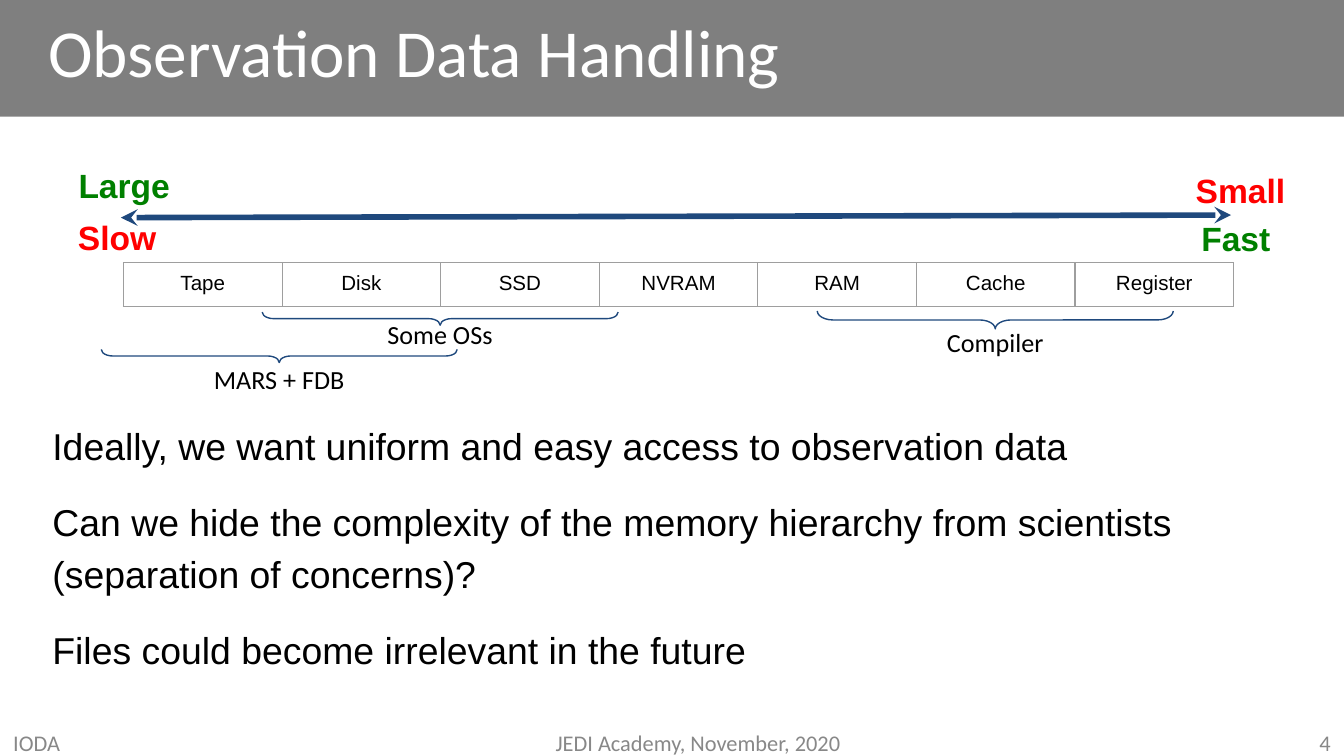
from lxml import etree
from pptx import Presentation
from pptx.dml.color import RGBColor
from pptx.enum.shapes import MSO_CONNECTOR, MSO_SHAPE
from pptx.enum.text import MSO_ANCHOR, PP_ALIGN
from pptx.oxml.ns import qn
from pptx.util import Pt

LEFT, CENTER, RIGHT = PP_ALIGN.LEFT, PP_ALIGN.CENTER, PP_ALIGN.RIGHT
TOP, MIDDLE = MSO_ANCHOR.TOP, MSO_ANCHOR.MIDDLE
RECTANGLE, LEFT_BRACE = MSO_SHAPE.RECTANGLE, MSO_SHAPE.LEFT_BRACE
STRAIGHT = MSO_CONNECTOR.STRAIGHT
BLACK, WHITE, NAVY, GREY = "000000", "FFFFFF", "1F497D", "888888"
GREEN, RED, BORDER = "008000", "FF0000", "9E9E9E"


def rgb(value):
    """Turn a hex string into a colour."""
    return RGBColor.from_string(value)


def write(frame, *lines, size=12, font="Calibri", color=BLACK, bold=False,
          align=LEFT, spacing=None, gap=0):
    """Fill a text frame with one paragraph per line."""
    for index, line in enumerate(lines):
        paragraph = frame.add_paragraph() if index else frame.paragraphs[0]
        paragraph.alignment = align
        if spacing:
            paragraph.line_spacing = spacing
        if index and gap:
            paragraph.space_before = Pt(gap)
        run = paragraph.add_run()
        run.text = line
        run.font.size = Pt(size)
        run.font.name = font
        run.font.bold = bold
        run.font.color.rgb = rgb(color)


class SlideBuilder:
    """Holds the style and the current slide."""

    def __init__(self, slide, accent=NAVY):
        """Remember the slide and its line colour."""
        self.shapes = slide.shapes
        self.accent = accent

    def banner(self, width, height):
        """Draw the half-transparent band behind the title."""
        band = self.shapes.add_shape(RECTANGLE, 0, 0, Pt(width), Pt(height))
        band.shadow.inherit = False
        band.fill.solid()
        band.fill.fore_color.rgb = rgb(BLACK)
        band.line.fill.background()
        tint = next(band._element.spPr.iter(qn("a:srgbClr")))
        etree.SubElement(tint, qn("a:alpha")).set("val", "50000")

    def text(self, left, top, width, height, *lines, inset=3.6, anchor=TOP,
             wrap=True, **style):
        """Place a text box."""
        box = self.shapes.add_textbox(Pt(left), Pt(top), Pt(width), Pt(height))
        frame = box.text_frame
        frame.word_wrap = wrap
        frame.vertical_anchor = anchor
        frame.margin_left = frame.margin_right = Pt(7.2)
        frame.margin_top = frame.margin_bottom = Pt(inset)
        write(frame, *lines, **style)

    def table_row(self, left, top, width, height, labels):
        """Place a one-row table with thin borders."""
        table = self.shapes.add_table(1, len(labels), Pt(left), Pt(top),
                                      Pt(width), Pt(height)).table
        table.first_row = table.horz_banding = False
        for column, cell, label in zip(table.columns, table.rows[0].cells, labels):
            column.width = Pt(width / len(labels))
            cell.margin_left = cell.margin_right = Pt(7.2)
            cell.margin_top = cell.margin_bottom = Pt(5)
            properties = cell._tc.get_or_add_tcPr()
            for side in ("a:lnL", "a:lnR", "a:lnT", "a:lnB"):
                edge = etree.SubElement(properties, qn(side), w=str(Pt(0.75)))
                fill = etree.SubElement(edge, qn("a:solidFill"))
                etree.SubElement(fill, qn("a:srgbClr"), val=BORDER)
            cell.fill.background()
            write(cell.text_frame, label, size=11, font="Arial", align=CENTER)

    def double_arrow(self, x1, y1, x2, y2):
        """Draw a line with an arrowhead at both ends."""
        arrow = self.shapes.add_connector(STRAIGHT, Pt(x1), Pt(y1), Pt(x2), Pt(y2))
        arrow.line.color.rgb = rgb(self.accent)
        arrow.line.width = Pt(3)
        properties = arrow._element.spPr
        outline = properties.find(qn("a:ln"))
        for end in ("a:headEnd", "a:tailEnd"):
            etree.SubElement(outline, qn(end), type="stealth")
        etree.SubElement(properties, qn("a:effectLst"))

    def brace(self, center, top, length, depth):
        """Draw a brace that points down."""
        brace = self.shapes.add_shape(
            LEFT_BRACE, Pt(center - depth / 2), Pt(top + depth / 2 - length / 2),
            Pt(depth), Pt(length))
        brace.rotation = 270
        brace.adjustments[0] = 0.876
        brace.shadow.inherit = False
        brace.fill.background()
        brace.line.color.rgb = rgb(self.accent)
        brace.line.width = Pt(0.75)


def main():
    """Build the slide and save it."""
    deck = Presentation()
    deck.slide_width, deck.slide_height = Pt(720), Pt(405)
    page = SlideBuilder(deck.slides.add_slide(deck.slide_layouts[6]))

    page.banner(720, 62.5)
    page.text(18.7, 0, 598, 54, "Observation Data Handling",
              size=36, color=WHITE, anchor=MIDDLE)
    page.text(21, 216, 678, 160.5,
              "Ideally, we want uniform and easy access to observation data",
              "Can we hide the complexity of the memory hierarchy from scientists "
              "(separation of concerns)?",
              "Files could become irrelevant in the future",
              size=20, font="Arial", inset=7.2, spacing=1.15, gap=13.2)

    page.table_row(66.2, 140.8, 594.7, 23.4,
                   ["Tape", "Disk", "SSD", "NVRAM", "RAM", "Cache", "Register"])
    page.double_arrow(64.8, 116.6, 659.5, 115.2)

    for user, center, brace_top, depth, label_top in (
            ("Compiler", 533.2, 166.6, 9.6, 167.8),
            ("Some OSs", 235.8, 167.2, 7, 163.5),
            ("MARS + FDB", 149.6, 187.2, 7, 187.2)):
        page.brace(center, brace_top, 190.7, depth)
        page.text(center - 47, label_top, 94, 21, user,
                  size=14, inset=7.2, align=CENTER)

    for trait, left, top, width, color in (
            ("Large", 35, 85, 64, GREEN), ("Small", 633.5, 87.4, 63, RED),
            ("Fast", 636.5, 113.2, 52, GREEN), ("Slow", 34.7, 112.6, 58, RED)):
        page.text(left, top, width, 29, trait, size=18, font="Arial",
                  color=color, bold=True, wrap=False)

    for footer, left, width, align in (
            ("IODA", 0, 168, LEFT),
            ("JEDI Academy, November, 2020", 260, 228, CENTER),
            ("4", 552, 168, RIGHT)):
        page.text(left, 390.2, width, 14.8, footer, color=GREY,
                  anchor=MIDDLE, align=align)

    deck.save("out.pptx")


if __name__ == "__main__":
    main()
